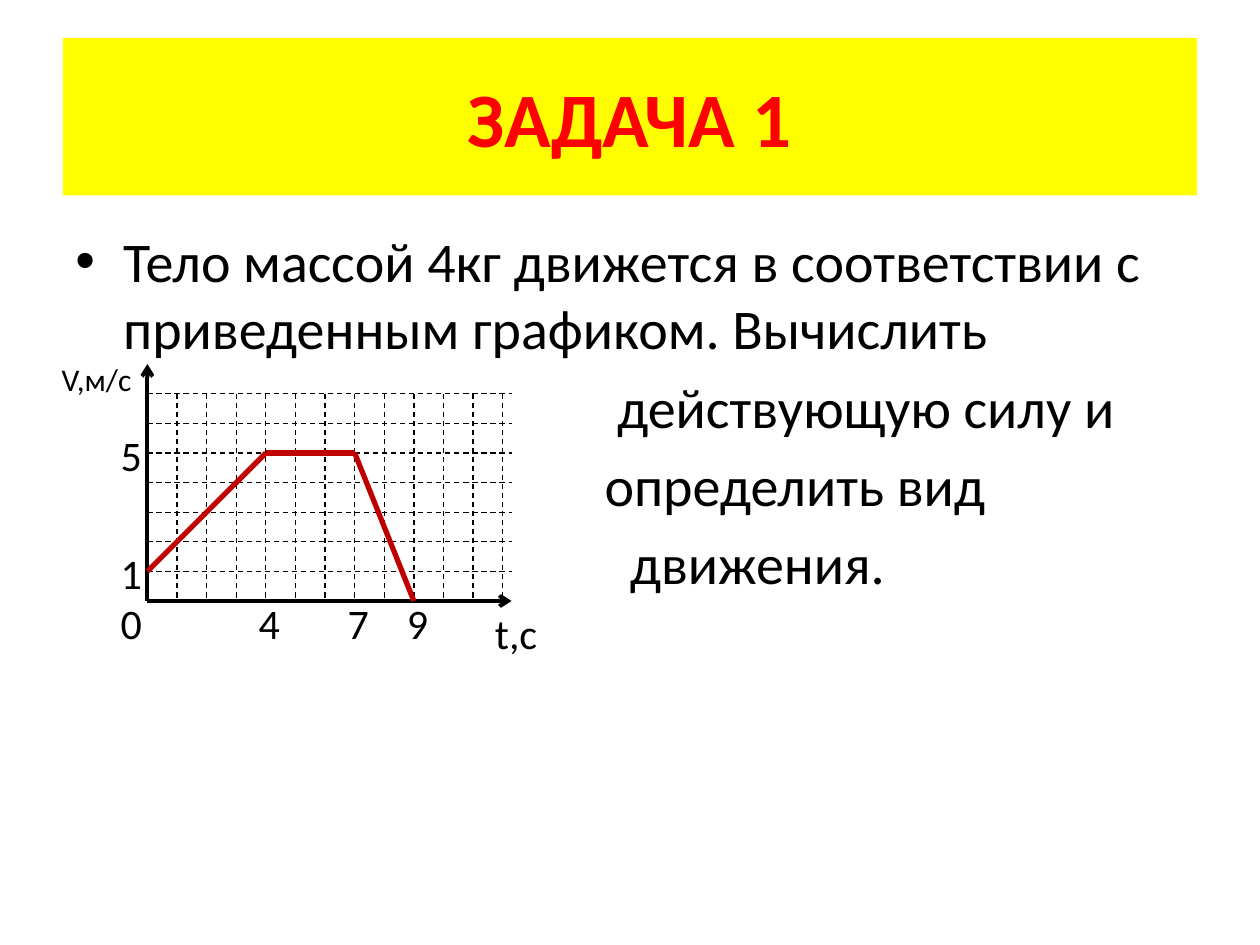
from lxml import etree
from pptx import Presentation
from pptx.dml.color import RGBColor
from pptx.enum.dml import MSO_LINE
from pptx.enum.shapes import MSO_CONNECTOR, MSO_SHAPE
from pptx.enum.text import MSO_ANCHOR, PP_ALIGN
from pptx.oxml.ns import qn
from pptx.util import Inches, Pt

STRAIGHT = MSO_CONNECTOR.STRAIGHT
RECTANGLE = MSO_SHAPE.RECTANGLE
DASH = MSO_LINE.DASH
MIDDLE = MSO_ANCHOR.MIDDLE
CENTER = PP_ALIGN.CENTER

BLACK, RED, YELLOW, CRIMSON = "000000", "FF0000", "FFFF00", "C00000"
WIDTH, HEIGHT = 10, 7.5
ORIGIN_X, ORIGIN_Y, CELL = 1.17, 4.77, 0.235
COLUMNS, ROWS = 12, 7
AXIS_COLUMNS, AXIS_ROWS = 12.3, 8


def color(hex_code):
    """Turn a hex string into a colour."""
    return RGBColor.from_string(hex_code)


class TaskSlide:
    """Draw slide elements in shares of the slide or cells of the plot."""

    font = "Calibri"

    def __init__(self, slide):
        """Keep the slide to draw on."""
        self.slide = slide

    def share(self, left, top, width, height):
        """Turn shares of the slide into lengths."""
        return [Inches(part * full) for part, full in
                zip((left, top, width, height), (WIDTH, HEIGHT) * 2)]

    def point(self, column, row):
        """Turn plot coordinates into a place on the slide."""
        return Inches(ORIGIN_X + column * CELL), Inches(ORIGIN_Y - row * CELL)

    def add_text(self, paragraph, text, size, ink=BLACK, bold=False):
        """Add one run to a paragraph."""
        run = paragraph.add_run()
        run.text = text
        run.font.name, run.font.size, run.font.bold = self.font, Pt(size), bold
        run.font.color.rgb = color(ink)

    def title(self, text, box):
        """Add the filled title band."""
        band = self.slide.shapes.add_shape(RECTANGLE, *self.share(*box))
        band.shadow.inherit = False
        band.fill.solid()
        band.fill.fore_color.rgb = color(YELLOW)
        band.line.fill.background()
        band.text_frame.vertical_anchor = MIDDLE
        heading = band.text_frame.paragraphs[0]
        heading.alignment = CENTER
        self.add_text(heading, text, 44, RED, bold=True)

    def body(self, paragraphs, box):
        """Add the task text from (text, left margin, bulleted) entries."""
        frame = self.slide.shapes.add_textbox(*self.share(*box)).text_frame
        frame.word_wrap = True
        for index, (text, margin, bulleted) in enumerate(paragraphs):
            paragraph = frame.add_paragraph() if index else frame.paragraphs[0]
            paragraph.space_before = Pt(6.4)
            properties = paragraph._p.get_or_add_pPr()
            indent = Inches(margin * WIDTH)
            properties.set("marL", str(indent))
            if bulleted:
                properties.set("indent", str(-indent))
                etree.SubElement(properties, qn("a:buFont"), typeface="Arial")
                etree.SubElement(properties, qn("a:buChar"), char="•")
            self.add_text(paragraph, text, 32)

    def line(self, start, end, ink=BLACK, weight=0.75, dash=None, arrow=False):
        """Join two plot points."""
        stroke = self.slide.shapes.add_connector(
            STRAIGHT, *self.point(*start), *self.point(*end))
        stroke.line.color.rgb = color(ink)
        stroke.line.width = Pt(weight)
        if dash:
            stroke.line.dash_style = dash
        if arrow:
            outline = stroke._element.spPr.find(qn("a:ln"))
            etree.SubElement(outline, qn("a:tailEnd"), type="arrow")
        etree.SubElement(stroke._element.spPr, qn("a:effectLst"))

    def label(self, text, column, row, columns=1.6, size=24):
        """Add a label whose top left corner is a plot point."""
        box = self.slide.shapes.add_textbox(
            *self.point(column, row), Inches(columns * CELL), Inches(0.5))
        box.text_frame.word_wrap = True
        self.add_text(box.text_frame.paragraphs[0], text, size)


def main():
    """Build and save the slide."""
    deck = Presentation()
    deck.slide_width, deck.slide_height = Inches(WIDTH), Inches(HEIGHT)
    task = TaskSlide(deck.slides.add_slide(deck.slide_layouts[6]))

    task.title("ЗАДАЧА 1", (0.05, 0.04, 0.9, 1 / 6))
    task.body([
        ("Тело массой 4кг движется в соответствии с приведенным графиком. Вычислить",
         0.038, True),
        ("действующую силу и", 0.43, False),
        ("определить вид", 0.42, False),
        ("движения.", 0.44, False),
    ], (0.05, 0.233, 0.9, 0.66))

    for tip in ((0, AXIS_ROWS), (AXIS_COLUMNS, 0)):
        task.line((0, 0), tip, weight=2.25, arrow=True)
    for row in range(1, ROWS + 1):
        task.line((0, row), (AXIS_COLUMNS, row), dash=DASH)
    for column in range(1, COLUMNS + 1):
        task.line((column, ROWS), (column, 0), dash=DASH)

    motion = [(0, 1), (4, 5), (7, 5), (9, 0)]
    for start, end in zip(motion, motion[1:]):
        task.line(start, end, CRIMSON, 3)

    task.label("0", -1.32, 0.34)
    for time in (4, 7, 9):
        task.label(str(time), time - 0.66, 0.34)
    for speed in (1, 5):
        task.label(str(speed), -1.32, speed + 1)
    task.label("t,c", 11.32, 0, columns=2.6)
    task.label("V,м/с", -3.32, 8.34, columns=3.4, size=18)

    deck.save("out.pptx")


if __name__ == "__main__":
    main()
